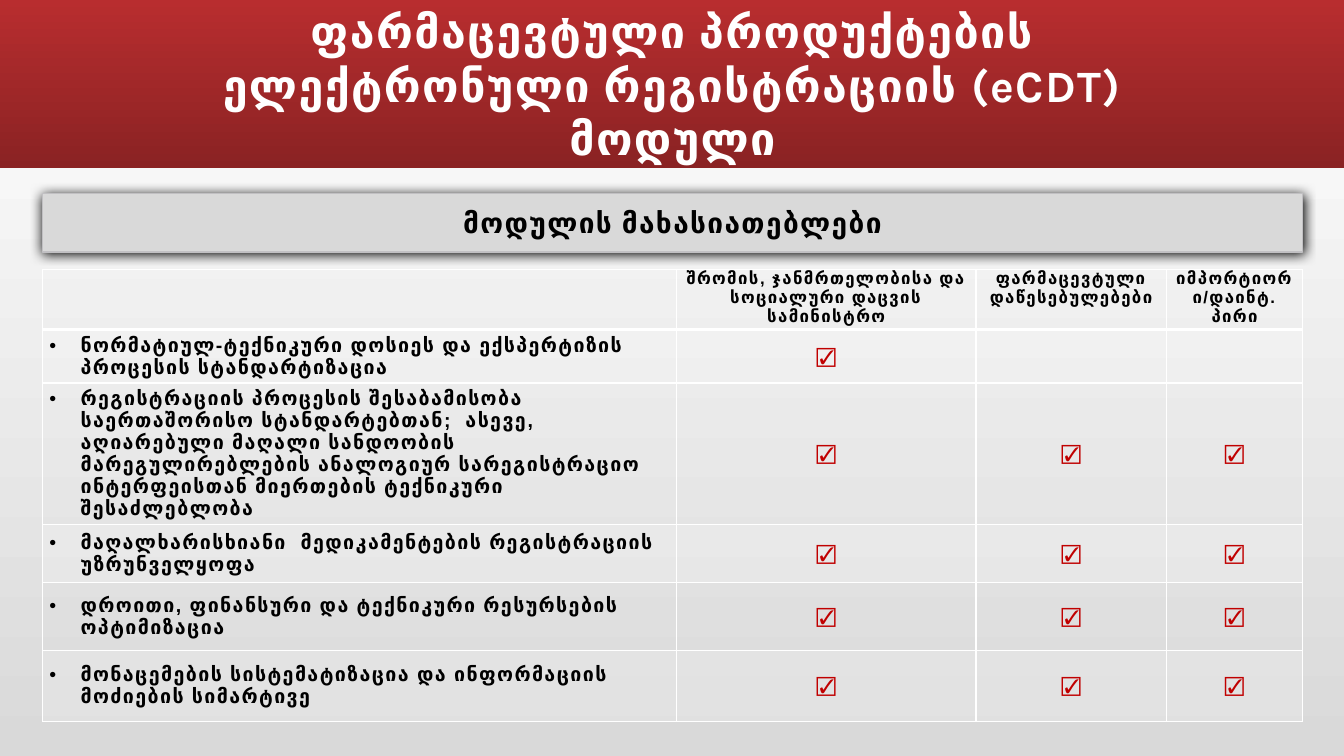
from lxml import etree
from pptx import Presentation
from pptx.dml.color import RGBColor
from pptx.enum.shapes import MSO_SHAPE
from pptx.enum.text import MSO_ANCHOR, PP_ALIGN
from pptx.oxml import parse_xml
from pptx.oxml.ns import nsdecls, qn
from pptx.util import Inches, Pt

RECTANGLE = MSO_SHAPE.RECTANGLE
TOP, MIDDLE = MSO_ANCHOR.TOP, MSO_ANCHOR.MIDDLE
LEFT, CENTER = PP_ALIGN.LEFT, PP_ALIGN.CENTER

WHITE, BLACK, CHECK_RED = "FFFFFF", "000000", "C00000"
CHECK = "☑"
COLUMN_WIDTHS = [6.29, 2.97, 1.89, 1.35]
ROW_HEIGHTS = [0.58, 0.53, 1.35, 0.58, 0.67, 0.71]
HEADERS = [
    "",
    "შრომის, ჯანმრთელობისა და სოციალური დაცვის სამინისტრო",
    "ფარმაცევტული დაწესებულებები",
    "იმპორტიორი/დაინტ. პირი",
]
FEATURES = [
    ("ნორმატიულ-ტექნიკური დოსიეს და ექსპერტიზის პროცესის სტანდარტიზაცია", 1),
    ("რეგისტრაციის პროცესის შესაბამისობა საერთაშორისო სტანდარტებთან;  ასევე, "
     "აღიარებული მაღალი სანდოობის მარეგულირებლების ანალოგიურ სარეგისტრაციო "
     "ინტერფეისთან მიერთების ტექნიკური შესაძლებლობა", 3),
    ("მაღალხარისხიანი  მედიკამენტების რეგისტრაციის უზრუნველყოფა", 3),
    ("დროითი, ფინანსური და ტექნიკური რესურსების ოპტიმიზაცია", 3),
    ("მონაცემების სისტემატიზაცია და ინფორმაციის მოძიების სიმარტივე", 3),
]


def color(value):
    return RGBColor.from_string(value)


class SlideBuilder:
    heading_font = "Karla"
    table_font = "Arial"

    def __init__(self, slide):
        self.slide = slide

    def gradient(self, fill, start, end, angle):
        fill.gradient()
        fill.gradient_angle = angle
        for stop, value in zip(fill.gradient_stops, (start, end)):
            stop.color.rgb = color(value)

    def background(self, start, end, angle):
        self.gradient(self.slide.background.fill, start, end, angle)

    def rectangle(self, left, top, width, height):
        shape = self.slide.shapes.add_shape(
            RECTANGLE, Inches(left), Inches(top), Inches(width), Inches(height))
        shape.shadow.inherit = False
        return shape

    def banner(self, left, top, width, height, start, end):
        shape = self.rectangle(left, top, width, height)
        self.gradient(shape.fill, start, end, 270)
        shape.line.fill.background()

    def title(self, left, top, width, height, text):
        shape = self.slide.shapes.add_textbox(
            Inches(left), Inches(top), Inches(width), Inches(height))
        self.text(shape.text_frame, text, 32, WHITE, self.heading_font)

    def subtitle_bar(self, left, top, width, height, text):
        shape = self.rectangle(left, top, width, height)
        shape.fill.solid()
        shape.fill.fore_color.rgb = color("D9D9D9")
        shape.line.color.rgb = color("C1C0C3")
        shape.line.width = Pt(1)
        effects = shape._element.spPr.find(qn("a:effectLst"))
        effects.append(parse_xml(
            f'<a:outerShdw {nsdecls("a")} blurRad="{Pt(8.5)}" dist="{Pt(1)}" '
            f'dir="5400000" rotWithShape="0"><a:srgbClr val="{BLACK}"/></a:outerShdw>'))
        self.text(shape.text_frame, text, 20, BLACK, self.heading_font)

    def text(self, frame, text, size, text_color, font, align=CENTER, anchor=MIDDLE):
        frame.word_wrap = True
        frame.vertical_anchor = anchor
        paragraph = frame.paragraphs[0]
        paragraph.alignment = align
        run = paragraph.add_run()
        run.text = text
        run.font.size = Pt(size)
        run.font.bold = True
        run.font.name = font
        run.font.color.rgb = color(text_color)
        run._r.get_or_add_rPr().set("spc", "100")
        return paragraph

    def bullet(self, paragraph):
        paragraph.space_before = Pt(12)
        properties = paragraph._p.get_or_add_pPr()
        properties.set("marL", str(Inches(0.31)))
        properties.set("indent", str(Inches(-0.31)))
        etree.SubElement(properties, qn("a:buFont")).set("typeface", self.table_font)
        etree.SubElement(properties, qn("a:buChar")).set("char", "•")

    def style_cell(self, cell, row):
        cell.margin_left = cell.margin_right = Inches(0.07)
        cell.margin_top = cell.margin_bottom = 0
        properties = cell._tc.get_or_add_tcPr()
        if row % 2:
            cell.fill.solid()
            cell.fill.fore_color.rgb = color(WHITE)
            tint = properties.find(".//" + qn("a:srgbClr"))
            etree.SubElement(tint, qn("a:alpha")).set("val", "20000")
        else:
            cell.fill.background()
        widths = {"L": 1, "R": 1, "T": 2 if row == 1 else 1, "B": 2 if row == 0 else 1}
        for index, (side, width) in enumerate(widths.items()):
            properties.insert(index, parse_xml(
                f'<a:ln{side} {nsdecls("a")} w="{Pt(width)}"><a:solidFill>'
                f'<a:srgbClr val="{WHITE}"/></a:solidFill></a:ln{side}>'))

    def feature_table(self, left, top, headers, features):
        table = self.slide.shapes.add_table(
            len(ROW_HEIGHTS), len(COLUMN_WIDTHS), Inches(left), Inches(top),
            Inches(sum(COLUMN_WIDTHS)), Inches(sum(ROW_HEIGHTS))).table
        table.first_row = table.horz_banding = False
        for column, width in zip(table.columns, COLUMN_WIDTHS):
            column.width = Inches(width)
        for row, height in enumerate(ROW_HEIGHTS):
            table.rows[row].height = Inches(height)
            for column in range(len(COLUMN_WIDTHS)):
                self.style_cell(table.cell(row, column), row)
        for column, header in enumerate(headers):
            if header:
                self.cell_text(table.cell(0, column), header, 12, BLACK, CENTER, TOP)
        for row, (feature, checks) in enumerate(features, start=1):
            self.bullet(self.cell_text(table.cell(row, 0), feature, 14, BLACK, LEFT))
            for column in range(1, checks + 1):
                self.cell_text(table.cell(row, column), CHECK, 14, CHECK_RED)

    def cell_text(self, cell, text, size, text_color, align=CENTER, anchor=MIDDLE):
        cell.vertical_anchor = anchor
        return self.text(cell.text_frame, text, size, text_color,
                         self.table_font, align, anchor)


def main():
    presentation = Presentation()
    presentation.slide_width = Inches(13.33)
    presentation.slide_height = Inches(7.5)
    slide = presentation.slides.add_slide(presentation.slide_layouts[6])
    builder = SlideBuilder(slide)
    builder.background("D9D9D9", WHITE, 90)
    builder.banner(0, 0, 13.33, 1.67, "B82D2F", "8A2223")
    builder.title(1.17, 0, 11, 1.67,
                  "ფარმაცევტული პროდუქტების ელექტრონული რეგისტრაციის (eCDT) მოდული")
    builder.subtitle_bar(0.42, 1.92, 12.5, 0.58, "მოდულის მახასიათებლები")
    builder.feature_table(0.42, 2.67, HEADERS, FEATURES)
    presentation.save("out.pptx")


if __name__ == "__main__":
    main()
